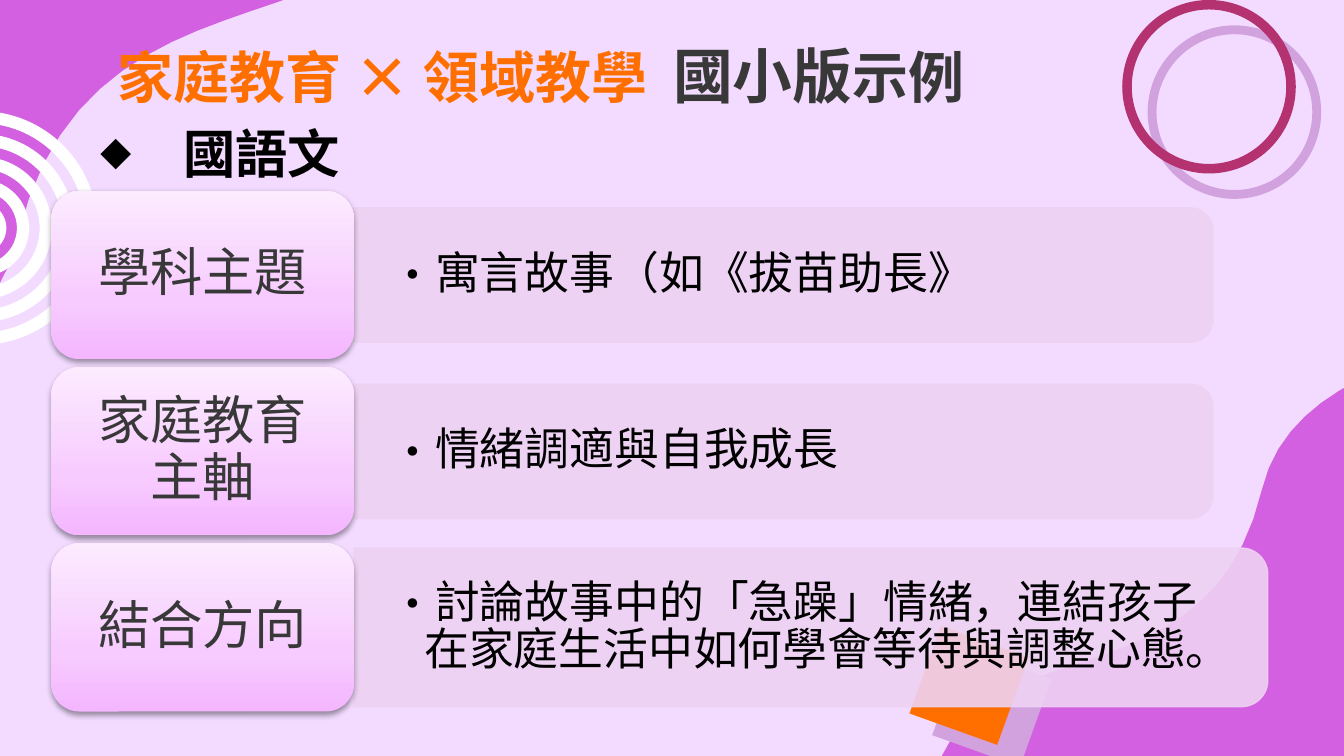
from dataclasses import dataclass

from lxml.etree import SubElement
from pptx import Presentation
from pptx.dml.color import RGBColor as RGB
from pptx.enum.shapes import MSO_SHAPE as SHAPE
from pptx.enum.text import MSO_ANCHOR as ANCHOR, PP_ALIGN as ALIGN
from pptx.oxml import parse_xml
from pptx.oxml.ns import nsdecls, qn
from pptx.util import Cm, Pt


@dataclass(frozen=True)
class Theme:
    font: str = "Noto Sans CJK SC"
    page: str = "F2DBFF"
    wave: str = "D260E0"
    white: str = "FFFFFF"
    mauve: str = "D2A2DF"
    berry: str = "B3326F"
    orange: str = "FF6F00"
    panel: str = "EED2F3"
    dark: str = "383838"
    black: str = "000000"
    tile_stops: tuple = ((0, "F4B6FF"), (35, "F7CBFF"), (100, "FCEBFF"))
    title_size: int = 30
    edition_size: int = 32
    heading_size: int = 28
    body_size: int = 24


T = Theme()

TITLE = [
    ("家庭教育 × 領域教學", T.title_size, T.orange, 0),
    (" ", T.title_size, T.orange, 7),
    ("國小版", T.edition_size, T.dark, 0),
    ("示例", T.title_size, T.dark, 0),
]
SUBJECT = "國語文"
ROWS = [
    {"topic": "學科主題", "detail": "寓言故事（如《拔苗助長》", "panel": (16.23, 2.54), "spacing": 0.9},
    {"topic": "家庭教育主軸", "detail": "情緒調適與自我成長", "panel": (16.23, 2.54), "spacing": 0.9},
    {"topic": "結合方向",
     "detail": "討論故事中的「急躁」情緒，連結孩子在家庭生活中如何學會等待與調整心態。",
     "panel": (17.27, 3.0), "spacing": Pt(25)},
]

WAVES = [
    {"start": (29.26, 6.38), "end": (28.91, 17.22), "curves": [
        ((29.26, 6.38), (24.51, 6.43), (23.85, 9.25)),
        ((22.91, 13.26), (18.92, 11.86), (17.81, 14.27)),
        ((17.17, 15.67), (17.32, 16.99), (17.32, 16.99))]},
    {"start": (-6.81, 8.28), "end": (-6.32, -6.02), "curves": [
        ((-6.81, 8.28), (-0.53, 8.18), (0.33, 4.5)),
        ((1.57, -0.79), (6.83, 1.04), (8.31, -2.13)),
        ((9.14, -3.96), (8.94, -5.72), (8.94, -5.72))]},
]
RIPPLE_CENTER, RIPPLE_RADIUS, RIPPLE_STEP, RIPPLE_WIDTH = (-0.37, 4.31), 2.21, 0.43, 0.23
RINGS = [(21.69, 0.48, 0.051, T.mauve), (21.21, 0, 0.055, T.berry)]
DIAMONDS = [(17.5, 12.12, T.mauve), (17.07, 11.71, T.orange)]
TILE_LEFT, TILE_TOP, TILE_W, TILE_H, ROW_PITCH = 0.97, 3.61, 5.72, 3.18, 3.33
CURVE_STEPS = 20

prs = Presentation()
prs.slide_width, prs.slide_height = Cm(25.4), Cm(14.29)
slide = prs.slides.add_slide(prs.slide_layouts[6])
slide.background.fill.solid()
slide.background.fill.fore_color.rgb = RGB.from_string(T.page)


def paint(shape, color):
    shape.shadow.inherit = False
    shape.fill.solid()
    shape.fill.fore_color.rgb = RGB.from_string(color)
    shape.line.fill.background()
    return shape


def add_preset(kind, left, top, width, height, color):
    return paint(slide.shapes.add_shape(kind, Cm(left), Cm(top), Cm(width), Cm(height)), color)


def add_wave(start, curves, end):
    points, origin = [], start
    for c1, c2, target in curves:
        for step in range(1, CURVE_STEPS + 1):
            t = step / CURVE_STEPS
            u = 1 - t
            points.append(tuple(
                Cm(u**3 * a + 3 * u * u * t * b + 3 * u * t * t * c + t**3 * d)
                for a, b, c, d in zip(origin, c1, c2, target)))
        origin = target
    points.append(tuple(map(Cm, end)))
    builder = slide.shapes.build_freeform(Cm(start[0]), Cm(start[1]))
    builder.add_line_segments(points, close=True)
    paint(builder.convert_to_shape(), T.wave)


def add_box(left, top, width, height, insets, anchor=ANCHOR.TOP, wrap=True):
    box = slide.shapes.add_textbox(Cm(left), Cm(top), Cm(width), Cm(height))
    return set_frame(box.text_frame, insets, anchor, wrap)


def set_frame(frame, insets, anchor, wrap=True):
    frame.word_wrap, frame.vertical_anchor = wrap, anchor
    frame.margin_left = frame.margin_right = Cm(insets[0])
    frame.margin_top = frame.margin_bottom = Cm(insets[1])
    return frame


def style_run(run, size, color, bold=False):
    run.font.size, run.font.bold, run.font.name = Pt(size), bold, T.font
    run.font.color.rgb = RGB.from_string(color)
    SubElement(run._r.get_or_add_rPr(), qn("a:ea")).set("typeface", T.font)


def add_bullet(paragraph, mark, indent, scale=100):
    props = paragraph._p.get_or_add_pPr()
    props.set("marL", str(Cm(indent)))
    props.set("indent", str(-Cm(indent)))
    color = SubElement(props, qn("a:buClr"))
    SubElement(color, qn("a:srgbClr")).set("val", T.black)
    SubElement(props, qn("a:buSzPct")).set("val", str(scale * 1000))
    SubElement(props, qn("a:buFont")).set("typeface", T.font)
    SubElement(props, qn("a:buChar")).set("char", mark)


def finish_tile(tile):
    props = tile._element.spPr
    stops = "".join(f'<a:gs pos="{pos * 1000}"><a:srgbClr val="{color}"/></a:gs>'
                    for pos, color in T.tile_stops)
    gradient = parse_xml(f'<a:gradFill {nsdecls("a")}><a:gsLst>{stops}</a:gsLst>'
                         '<a:lin ang="16200000" scaled="0"/></a:gradFill>')
    props.replace(props.find(qn("a:solidFill")), gradient)
    shadow = SubElement(props.find(qn("a:effectLst")), qn("a:outerShdw"),
                        blurRad="40000", dist="20000", dir="5400000", rotWithShape="0")
    color = SubElement(shadow, qn("a:srgbClr"), val=T.black)
    SubElement(color, qn("a:alpha"), val="38000")


def add_row(index, topic, detail, panel, spacing):
    tile_top = TILE_TOP + index * ROW_PITCH
    middle = tile_top + TILE_H / 2
    panel_left = TILE_LEFT + TILE_W
    width, height = panel
    band = add_preset(SHAPE.ROUND_2_SAME_RECTANGLE, panel_left + (width - height) / 2,
                      middle - width / 2, height, width, T.panel)
    band.rotation = 90
    band.line.color.rgb = RGB.from_string(T.panel)
    band.line.width = Pt(0.75)
    for color in band._element.spPr.iter(qn("a:srgbClr")):
        SubElement(color, qn("a:alpha")).set("val", "90000")

    text_h = height - 0.25
    detail_line = add_box(panel_left, middle - text_h / 2, width - 0.12, text_h,
                          (0.69, 0.36), ANCHOR.MIDDLE).paragraphs[0]
    detail_line.text = detail
    detail_line.line_spacing = spacing
    add_bullet(detail_line, "•", 0.64)
    style_run(detail_line.runs[0], T.body_size, T.black)

    tile = add_preset(SHAPE.ROUNDED_RECTANGLE, TILE_LEFT, tile_top, TILE_W, TILE_H, T.white)
    finish_tile(tile)
    topic_line = set_frame(tile.text_frame, (0.46, 0.31), ANCHOR.MIDDLE).paragraphs[0]
    topic_line.text = topic
    topic_line.alignment, topic_line.line_spacing = ALIGN.CENTER, 0.9
    style_run(topic_line.runs[0], T.heading_size, T.dark)


for wave in WAVES:
    add_wave(**wave)
for order in range(5):
    radius = RIPPLE_RADIUS - order * RIPPLE_STEP
    ripple = add_preset(SHAPE.DONUT, RIPPLE_CENTER[0] - radius, RIPPLE_CENTER[1] - radius,
                        2 * radius, 2 * radius, T.white)
    ripple.adjustments[0] = RIPPLE_WIDTH / (2 * radius)
for left, top, thickness, color in RINGS:
    add_preset(SHAPE.DONUT, left, top, 3.28, 3.28, color).adjustments[0] = thickness
for left, top, color in DIAMONDS:
    add_preset(SHAPE.DIAMOND, left, top, 2.49, 2.49, color).rotation = 334.7
for index, row in enumerate(ROWS):
    add_row(index, **row)

title_line = add_box(1.98, 0.48, 21.44, 1.6, (0.25, 0.25)).paragraphs[0]
for words, size, color, tracking in TITLE:
    run = title_line.add_run()
    run.text = words
    style_run(run, size, color, bold=True)
    if tracking:
        run._r.get_or_add_rPr().set("spc", str(tracking * 100))

subject_line = add_box(1.65, 2.16, 5.11, 1.45, (0.25, 0.13), wrap=False).paragraphs[0]
subject_line.text = SUBJECT
add_bullet(subject_line, "◆", 1.57, 60)
style_run(subject_line.runs[0], T.heading_size, T.black, bold=True)

prs.save("out.pptx")
